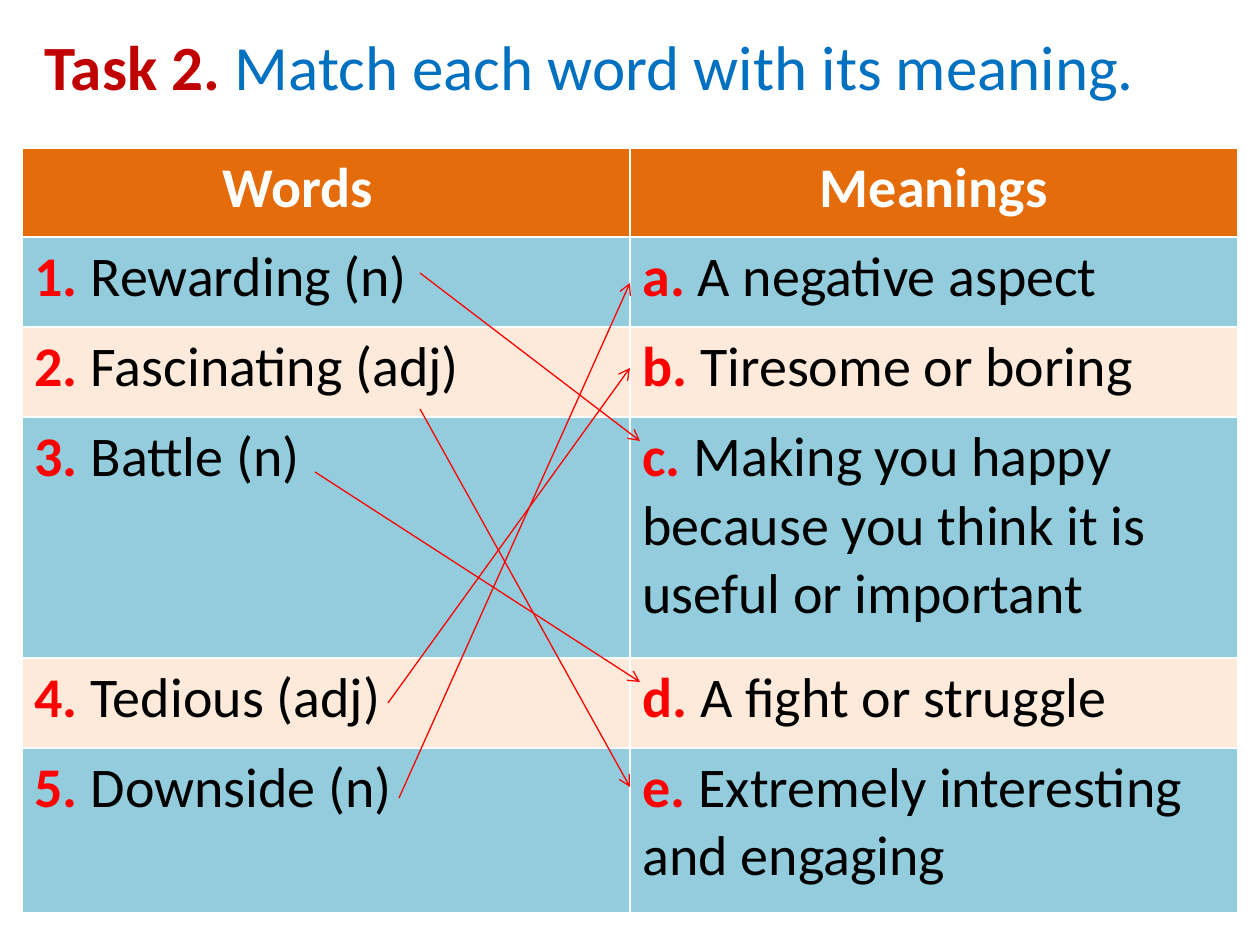
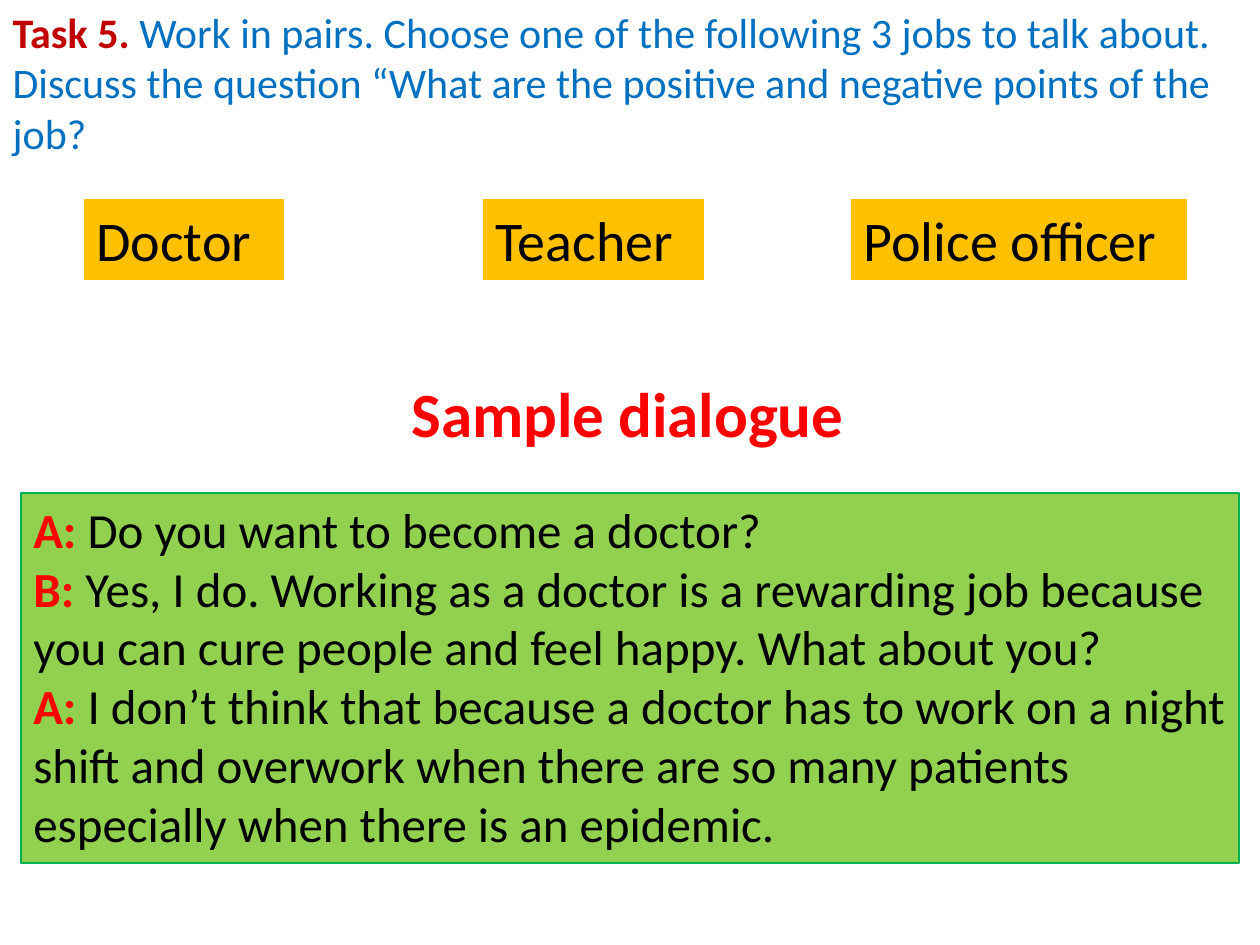
import pptx
import pptx.dml.color
import pptx.enum.shapes
import pptx.enum.text
import pptx.oxml
import pptx.oxml.ns
import pptx.util

PX = 7257  # EMU in one px, 126 px to the inch
FONT = "Calibri"
DARK_RED, RED, BLUE, BLACK, WHITE = "C00000", "FF0000", "0070C0", "000000", "FFFFFF"
ORANGE, AQUA, PEACH = "E46C0A", "93CDDD", "FDEADA"
AMBER, GREEN, DARK_GREEN = "FFC000", "92D050", "00B050"


def rgb(color):
    return pptx.dml.color.RGBColor.from_string(color)


def write(tf, size, *lines):
    """Fill a text frame; each line is a list of (text, colour, bold) runs."""
    tf.word_wrap = True
    tf.vertical_anchor = pptx.enum.text.MSO_ANCHOR.TOP
    for i, line in enumerate(lines):
        p = tf.add_paragraph() if i else tf.paragraphs[0]
        p.alignment = pptx.enum.text.PP_ALIGN.LEFT
        for text, color, bold in line:
            r = p.add_run()
            r.text = text
            font = {"name": FONT, "size": pptx.util.Pt(size), "bold": bold}
            for key, value in font.items():
                setattr(r.font, key, value)
            r.font.color.rgb = rgb(color)


prs = pptx.Presentation()
prs.slide_width = pptx.util.Inches(10)
prs.slide_height = pptx.util.Inches(7.5)

# Titles
titles = [
    ((32, 21, 1134, 89), 36, "Task 2. ", "Match each word with its meaning."),
    ((0, 0, 1260, 170), 24, "Task 5. ",
     "Work in pairs. Choose one of the following 3 jobs to talk about. "
     "Discuss the question “What are the positive and negative points of the job?"),
]
for box, size, task, instruction in titles:
    s = prs.slides.add_slide(prs.slide_layouts[5])
    title = s.shapes.title
    for key, value in zip(("left", "top", "width", "height"), box):
        setattr(title, key, value * PX)
    write(title.text_frame, size, [(task, DARK_RED, True), (instruction, BLUE, False)])
    title.text_frame.auto_size = pptx.enum.text.MSO_AUTO_SIZE.NONE
matching, speaking = prs.slides

# Slide 1: table of words and meanings
rows = [
    (90, "Rewarding (n)", "A negative aspect"),
    (90, "Fascinating (adj)", "Tiresome or boring"),
    (241, "Battle (n)", "Making you happy because you think it is useful or important"),
    (90, "Tedious (adj)", "A fight or struggle"),
    (165, "Downside (n)", "Extremely interesting and engaging"),
]
table = matching.shapes.add_table(
    len(rows) + 1, 2, 22 * PX, 148 * PX, 1216 * PX, 765 * PX).table
for column in table.columns:
    column.width = 608 * PX
table.rows[0].height = 89 * PX
for i, (heading, indent) in enumerate([("Words", 201), ("Meanings", 190)]):
    cell = table.cell(0, i)
    cell.margin_left = indent * PX
    cell.fill.solid()
    cell.fill.fore_color.rgb = rgb(ORANGE)
    write(cell.text_frame, 32, [(heading, WHITE, True)])
for n, (height, word, meaning) in enumerate(rows, 1):
    table.rows[n].height = height * PX
    for i, (label, text) in enumerate([(f"{n}. ", word), ("abcde"[n - 1] + ". ", meaning)]):
        cell = table.cell(n, i)
        cell.fill.solid()
        cell.fill.fore_color.rgb = rgb(AQUA if n % 2 else PEACH)
        write(cell.text_frame, 32, [(label, RED, True), (text, BLACK, False)])

# Slide 1: arrows from each word to its meaning
answers = [
    (420, 273, 640, 441),
    (420, 409, 630, 787),
    (315, 472, 640, 682),
    (388, 703, 630, 368),
    (399, 798, 630, 283),
]
for ends in answers:
    arrow = matching.shapes.add_connector(
        pptx.enum.shapes.MSO_CONNECTOR.STRAIGHT, *[v * PX for v in ends])
    arrow.line.color.rgb = rgb(RED)
    arrow.line.width = pptx.util.Pt(0.75)
    ln = arrow.line._get_or_add_ln()
    tail = pptx.oxml.parse_xml(f'<a:tailEnd {pptx.oxml.ns.nsdecls("a")} type="arrow"/>')
    ln.append(tail)
    ln.getparent().append(
        pptx.oxml.parse_xml(f'<a:effectLst {pptx.oxml.ns.nsdecls("a")}/>'))

# Slide 2: dialogue, its heading and the three jobs
dialogue = [
    ("A: ", "Do you want to become a doctor?"),
    ("B: ", "Yes, I do. Working as a doctor is a rewarding job because you can cure "
            "people and feel happy. What about you?"),
    ("A: ", "I don’t think that because a doctor has to work on a night shift and "
            "overwork when there are so many patients especially when there is an epidemic."),
]
boxes = [
    ((21, 493, 1218, 370), GREEN, DARK_GREEN, 28,
     [[(speaker, RED, True), (speech, BLACK, False)] for speaker, speech in dialogue]),
    ((399, 368, 473, 90), None, None, 36, [[("Sample dialogue", RED, True)]]),
]
for left, width, job in [(84, 200, "Doctor"), (483, 221, "Teacher"), (851, 336, "Police officer")]:
    boxes.append(((left, 199, width, 81), AMBER, None, 32, [[(job, BLACK, False)]]))
for box, fill, outline, size, lines in boxes:
    place = [v * PX for v in box]
    if fill:
        sp = speaking.shapes.add_shape(pptx.enum.shapes.MSO_SHAPE.RECTANGLE, *place)
        sp.shadow.inherit = False
        sp.fill.solid()
        sp.fill.fore_color.rgb = rgb(fill)
        if outline:
            sp.line.color.rgb = rgb(outline)
            sp.line.width = pptx.util.Pt(0.75)
        else:
            sp.line.fill.background()
    else:
        sp = speaking.shapes.add_textbox(*place)
    write(sp.text_frame, size, *lines)

prs.save("out.pptx")
